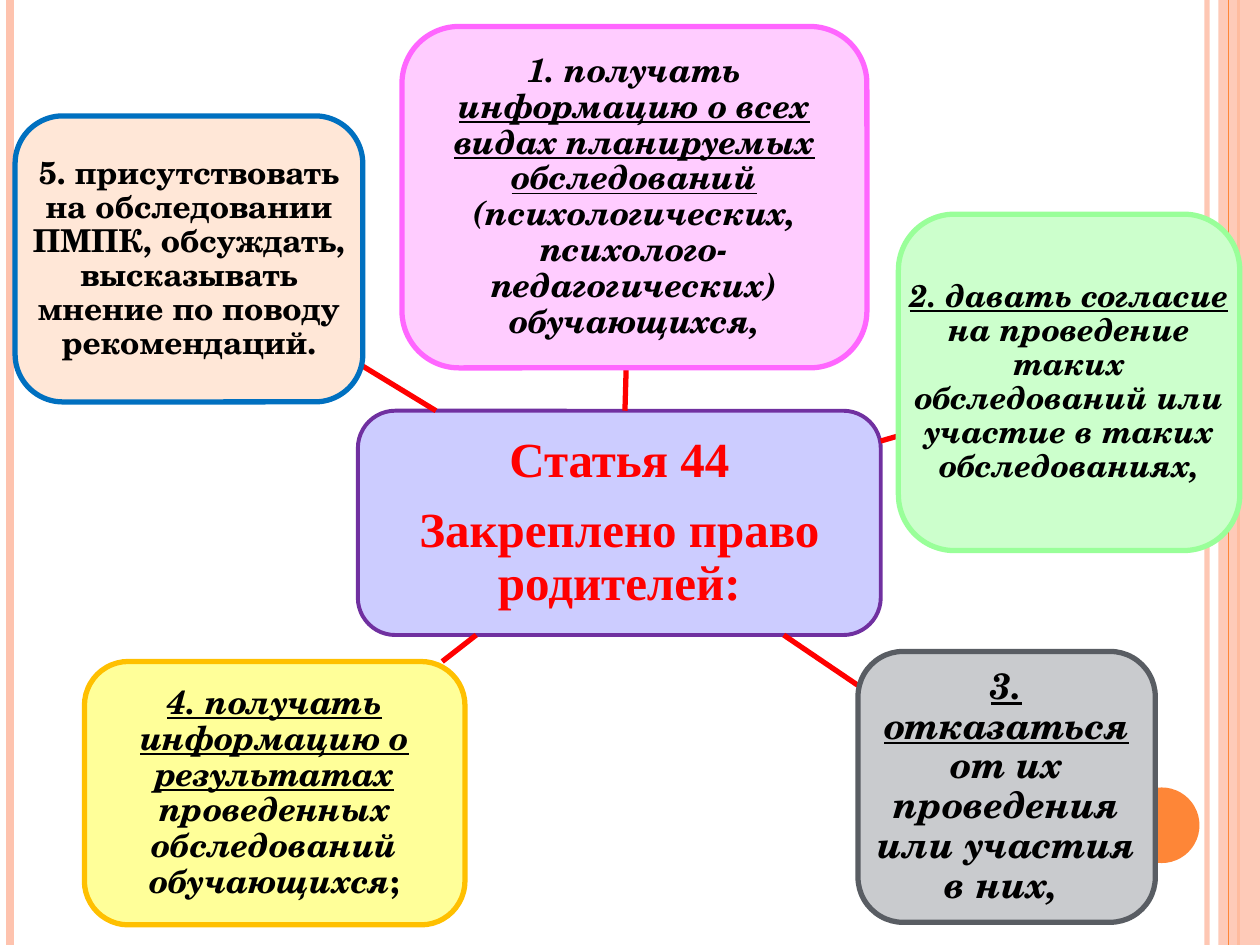
import pptx
import pptx.util
import pptx.dml.color
import pptx.enum.shapes
import pptx.enum.text
from pptx.oxml.ns import qn
from lxml import etree
from dataclasses import dataclass

Inches, Pt = pptx.util.Inches, pptx.util.Pt
SHAPE = pptx.enum.shapes.MSO_SHAPE


@dataclass(frozen=True)
class Theme:
    """Colours, fonts and sizes of the slide."""
    peach: str = "FEC3AE"
    orange: str = "FE8637"
    red: str = "FF0000"
    black: str = "000000"
    hub_fill: str = "CCCCFF"
    hub_line: str = "7030A0"
    hub_font: str = "Times New Roman"
    font: str = "TeX Gyre Schola"
    hub_size: int = 28
    small: int = 18
    medium: int = 19
    large: int = 21
    spoke_width: float = 3


T = Theme()
HUB = (2.84, 3.26, 4.15, 1.78)

# Each run is (text, underline, italic).
RIGHTS = [
    ((3.19, 0.21, 3.69, 2.71), "FFCCFF", "FF66FF", T.medium, 0.05,
     (4.96, 3.26, 4.97, 2.92),
     [("1. получать ", False, True),
      ("информацию о всех видах планируемых обследований", True, True),
      (" (психологических, психолого-педагогических) обучающихся,", False, True)]),
    ((7.13, 1.7, 2.71, 2.67), "CCFFCC", "99FF99", T.small, 0.05,
     (6.99, 3.5, 7.13, 3.46),
     [("2. давать согласие", True, True),
      (" на проведение таких обследований или участие в таких обследованиях,", False, True)]),
    ((0.12, 0.92, 2.76, 2.27), "FFE7D7", "0070C0", T.small, 0.05,
     (3.46, 3.26, 2.87, 2.9),
     [("5. присутствовать на обследовании ПМПК, обсуждать, высказывать "
       "мнение по поводу рекомендаций.", False, False)]),
    ((0.67, 5.25, 3.02, 2.09), "FFFF99", "FFC000", T.medium, 0.05,
     (3.78, 5.04, 3.51, 5.25),
     [("4. получать информацию о результатах", True, True),
      (" проведенных обследований обучающихся", False, True),
      (";", False, False)]),
    ((6.81, 5.17, 2.36, 2.15), "C9CBCE", "595D63", T.large, 0.06,
     (6.22, 5.04, 6.81, 5.44),
     [("3. отказаться", True, True),
      (" от их проведения или участия в них, ", False, True)]),
]


def rgb(value):
    """Return a colour object for a hex string."""
    return pptx.dml.color.RGBColor.from_string(value)


def set_alpha(sp, percent):
    """Make the first solid colour of a shape partly transparent."""
    clr = next(sp._element.spPr.iter(qn("a:srgbClr")))
    etree.SubElement(clr, qn("a:alpha")).set("val", str(percent * 1000))


def add_line(s, ends, color, width):
    """Add a straight line without a shadow."""
    sp = s.shapes.add_connector(pptx.enum.shapes.MSO_CONNECTOR.STRAIGHT,
                                *map(Inches, ends))
    sp.line.color.rgb = rgb(color)
    sp.line.width = Pt(width)
    etree.SubElement(sp._element.spPr, qn("a:effectLst"))
    return sp


def add_box(s, kind, at, fill, line=None, width=0):
    """Add a filled preset shape with an optional outline."""
    sp = s.shapes.add_shape(kind, *map(Inches, at))
    sp.shadow.inherit = False
    sp.fill.solid()
    sp.fill.fore_color.rgb = rgb(fill)
    if line:
        sp.line.color.rgb = rgb(line)
        sp.line.width = Pt(width)
    else:
        sp.line.fill.background()
    return sp


def add_text(s, at, paragraphs, font, size, color, inset):
    """Add centred bold text made of paragraphs of runs."""
    tf = s.shapes.add_textbox(*map(Inches, at)).text_frame
    tf.word_wrap = True
    tf.vertical_anchor = pptx.enum.text.MSO_ANCHOR.MIDDLE
    tf.margin_left = tf.margin_right = Inches(inset)
    tf.margin_top = tf.margin_bottom = Inches(inset)
    for i, runs in enumerate(paragraphs):
        p = tf.add_paragraph() if i else tf.paragraphs[0]
        p.alignment = pptx.enum.text.PP_ALIGN.CENTER
        p.line_spacing = 0.9
        p.space_after = Pt(round(size * 0.35))
        p.font.name, p.font.size, p.font.bold = font, Pt(size), True
        p.font.color.rgb = rgb(color)
        for text, underline, italic in runs:
            r = p.add_run()
            r.text = text
            r.font.underline, r.font.italic = underline, italic


def add_frame(s):
    """Draw the stripes along the slide edges and the orange dot."""
    def stripe(x, color, width):
        return add_line(s, (x, 0, x, 7.5), color, width)

    set_alpha(stripe(9.58, T.peach, 3), 93)
    stripe(0.08, T.peach, 4.5)
    stripe(9.83, T.orange, 1.5)
    set_alpha(add_box(s, SHAPE.RECTANGLE, (9.67, 0, 0.33, 7.5), T.peach), 87)
    stripe(9.75, T.orange, 0.75)
    add_box(s, SHAPE.OVAL, (8.92, 6.25, 0.6, 0.6), T.orange)


def add_hub(s):
    """Draw the central heading box."""
    add_box(s, SHAPE.ROUNDED_RECTANGLE, HUB, T.hub_fill, T.hub_line, 2.25)
    lines = ["Статья 44", "Закреплено право родителей:"]
    add_text(s, HUB, [[(line, False, False)] for line in lines],
             T.hub_font, T.hub_size, T.red, 0.08)


def add_right(s, at, fill, line, size, inset, spoke, runs):
    """Draw one right of the parents with its spoke to the hub."""
    add_line(s, spoke, T.red, T.spoke_width)
    add_box(s, SHAPE.ROUNDED_RECTANGLE, at, fill, line, 3)
    add_text(s, at, [runs], T.font, size, T.black, inset)


def main():
    """Build and save the slide."""
    prs = pptx.Presentation()
    prs.slide_width, prs.slide_height = Inches(10), Inches(7.5)
    s = prs.slides.add_slide(prs.slide_layouts[6])
    add_frame(s)
    add_hub(s)
    for right in RIGHTS:
        add_right(s, *right)
    prs.save("out.pptx")


if __name__ == "__main__":
    main()
